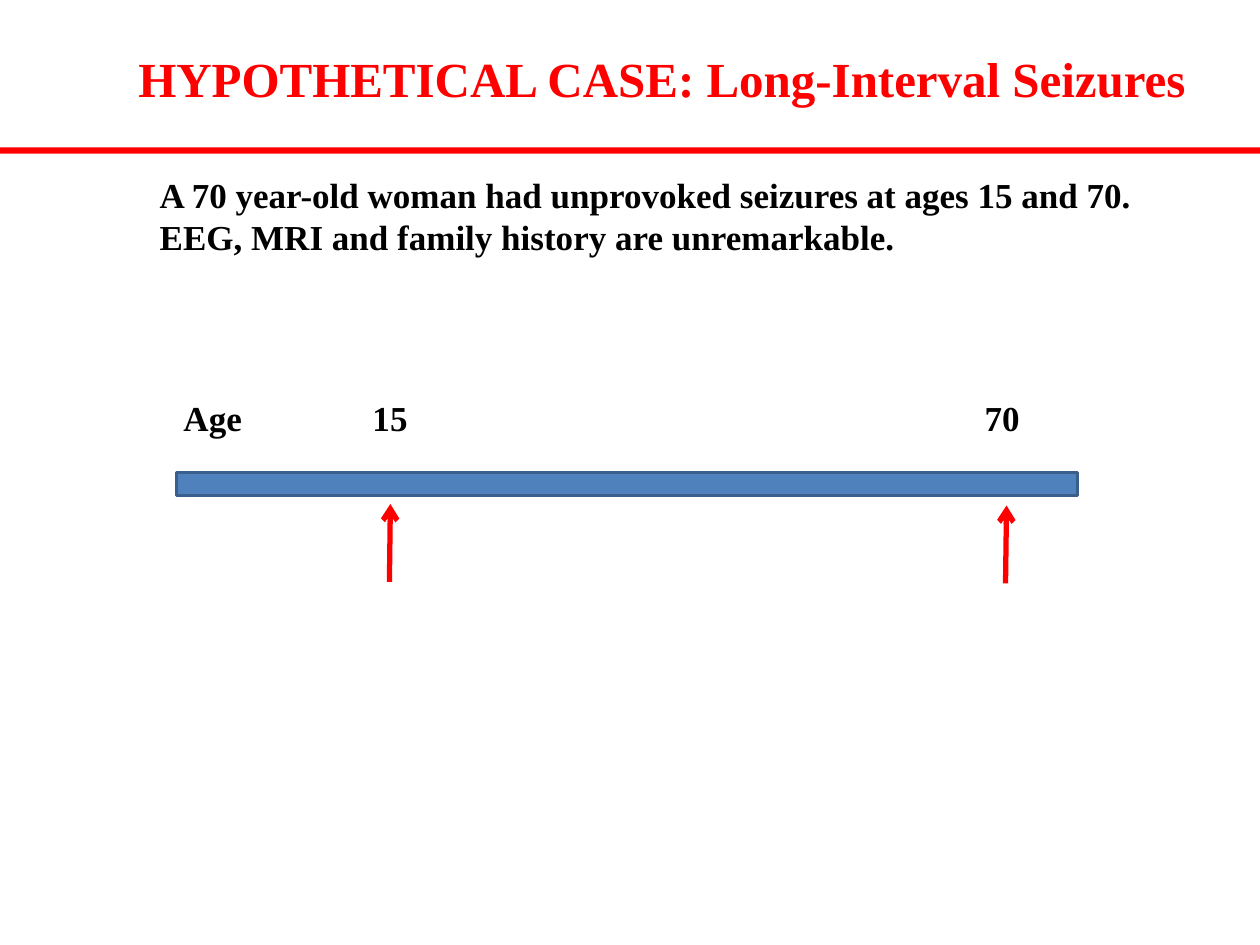
from lxml.etree import SubElement
from pptx import Presentation
from pptx.dml.color import RGBColor
from pptx.enum.shapes import MSO_CONNECTOR, MSO_SHAPE
from pptx.enum.text import MSO_AUTO_SIZE
from pptx.oxml.ns import qn
from pptx.util import Cm, Pt

COLOURS = {"red": "FF0000", "black": "000000", "bar": "4F81BD", "edge": "3A5F8C"}


def colour(name):
    return RGBColor.from_string(COLOURS[name])


def set_values(target, values):
    for name, value in values.items():
        setattr(target, name, value)


def add_text(shapes, area, text, size, ink, wrap=True):
    box = shapes.add_textbox(*map(Cm, area))
    set_values(box.text_frame, {"word_wrap": wrap, "auto_size": MSO_AUTO_SIZE.SHAPE_TO_FIT_TEXT})
    para = box.text_frame.paragraphs[0]
    span = para.add_run()
    span.text = text
    set_values(span.font, {"name": "Times New Roman", "size": Pt(size), "bold": True})
    span.font.color.rgb = colour(ink)
    return para


def add_bar(shapes, area, fill, edge=None):
    bar = shapes.add_shape(MSO_SHAPE.RECTANGLE, *map(Cm, area))
    bar.shadow.inherit = False
    bar.fill.solid()
    bar.fill.fore_color.rgb = colour(fill)
    if edge:
        bar.line.color.rgb = colour(edge)
        bar.line.width = Pt(2)
    else:
        bar.line.fill.background()


def add_arrow(shapes, left, top):
    ends = (left, top + 1.57, left + 0.02, top)
    arrow = shapes.add_connector(MSO_CONNECTOR.STRAIGHT, *map(Cm, ends))
    arrow.line.color.rgb = colour("red")
    arrow.line.width = Pt(3)
    SubElement(arrow.line._get_or_add_ln(), qn("a:tailEnd"), type="arrow")
    SubElement(arrow._element.spPr, qn("a:effectLst"))


def set_tab_stops(para, stops):
    tab_list = SubElement(para._p.get_or_add_pPr(), qn("a:tabLst"))
    for stop in stops:
        SubElement(tab_list, qn("a:tab"), pos=str(Cm(stop)), algn="l")


def add_header(page, left, top, width):
    title = "HYPOTHETICAL CASE: Long-Interval Seizures"
    add_text(page.shapes, (left + 2.54, top + 0.86, 21.84, 1.45), title, 28, "red", wrap=False)
    add_bar(page.shapes, (left, top + 2.97, width, 0.13), "red")


def add_case(page, left, top, width, height):
    summary = ("A 70 year-old woman had unprovoked seizures at ages 15 and 70. "
               "EEG, MRI and family history are unremarkable.")
    add_text(page.shapes, (left, top, width, height), summary, 20, "black")


def add_timeline(page, left, top, width):
    shapes = page.shapes.add_group_shape().shapes
    add_bar(shapes, (left, top + 1.66, width, 0.46), "bar", "edge")
    labels = add_text(shapes, (left - 0.11, top, 17.45, 1.12), "Age\t15\t70", 20, "black")
    set_tab_stops(labels, (3.81, 16.15))
    for offset, drop in ((4.29, 2.29), (16.71, 2.32)):
        add_arrow(shapes, left + offset, top + drop)


def main():
    deck = Presentation()
    set_values(deck, {"slide_width": Cm(25.4), "slide_height": Cm(19.05)})
    page = deck.slides.add_slide(deck.slide_layouts[6])
    add_header(page, 0, 0, 25.4)
    add_case(page, 2.97, 3.38, 20.12, 1.96)
    add_timeline(page, 3.56, 7.87, 18.16)
    deck.save("out.pptx")


if __name__ == "__main__":
    main()
